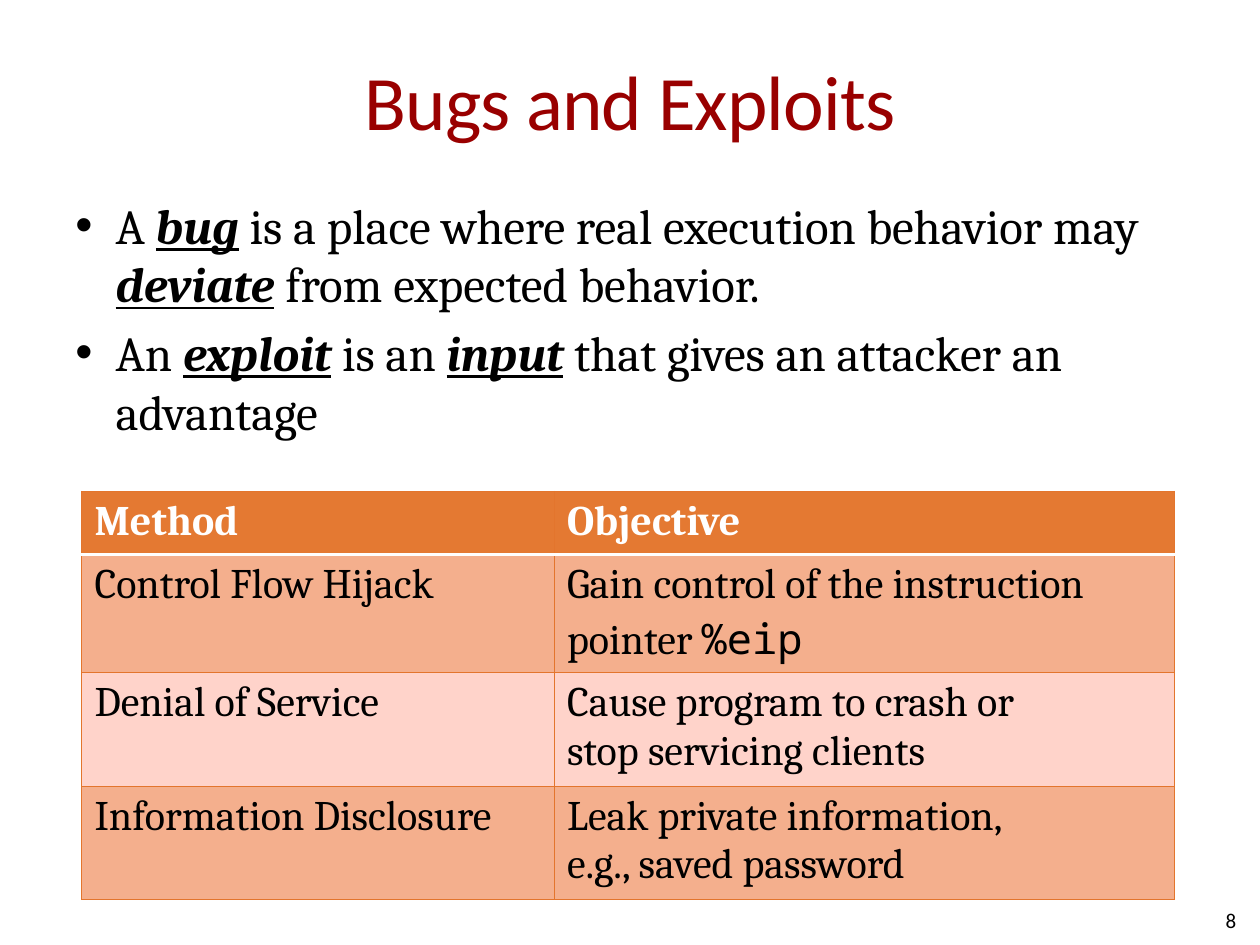
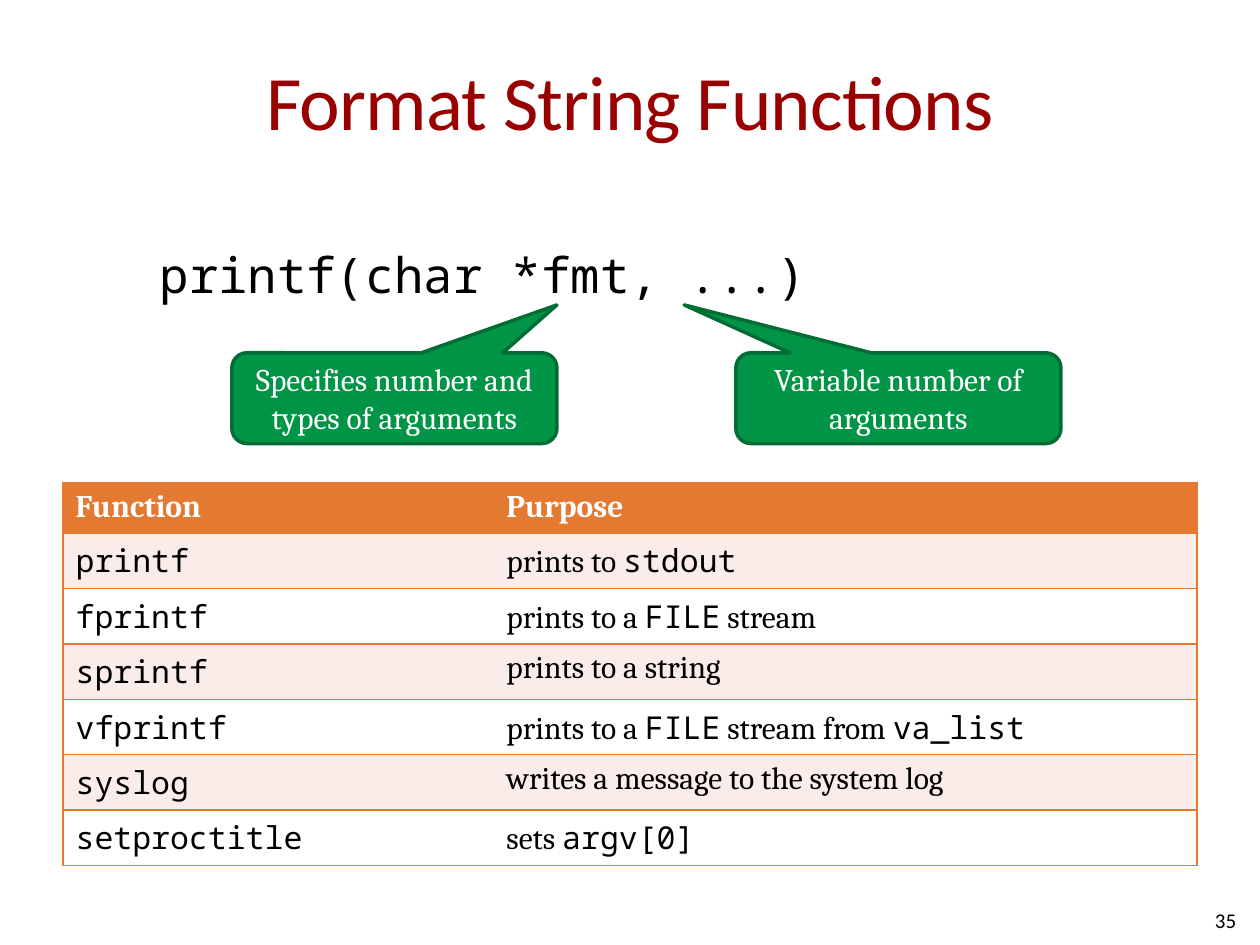
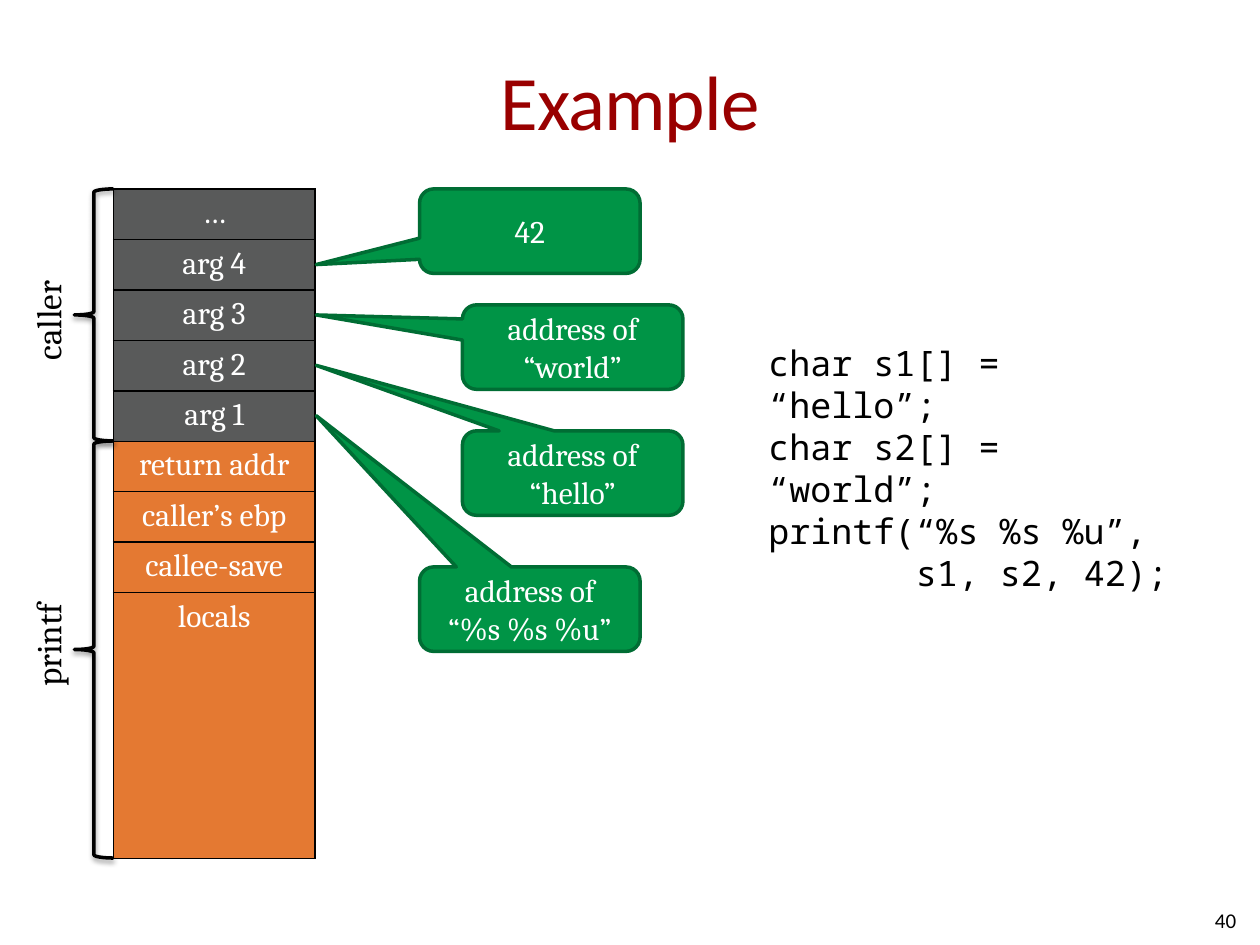
from collections import namedtuple
from dataclasses import dataclass

from lxml import etree
from pptx import Presentation
from pptx.dml.color import RGBColor
from pptx.enum.shapes import MSO_SHAPE
from pptx.enum.text import MSO_ANCHOR, MSO_AUTO_SIZE, PP_ALIGN
from pptx.oxml.ns import qn
from pptx.util import Inches, Pt

CALLOUT = MSO_SHAPE.ROUNDED_RECTANGULAR_CALLOUT
BRACE = MSO_SHAPE.LEFT_BRACE
TOP, MIDDLE = MSO_ANCHOR.TOP, MSO_ANCHOR.MIDDLE
LEFT, CENTER, RIGHT = PP_ALIGN.LEFT, PP_ALIGN.CENTER, PP_ALIGN.RIGHT
FIXED, GROW = MSO_AUTO_SIZE.NONE, MSO_AUTO_SIZE.SHAPE_TO_FIT_TEXT
TITLE_ONLY = 5
PLAIN_TABLE = "{2D5ABB26-0587-4C30-8999-92F81FD0307C}"

Box = namedtuple("Box", "left top width height")


@dataclass(frozen=True)
class Theme:
    heading: str = "Calibri"
    serif: str = "Cambria"
    mono: str = "Noto Sans Mono"
    red: str = "990000"
    black: str = "000000"
    white: str = "FFFFFF"
    orange: str = "E47932"
    orange_edge: str = "E3752D"
    peach: str = "F4AF8D"
    pink: str = "FFD3CA"
    blush: str = "FAECE8"
    gray: str = "595A5A"
    green: str = "009446"
    green_edge: str = "006D34"
    title_size: int = 44
    body_size: int = 28
    large_table_size: int = 24
    code_size: int = 20
    small_size: int = 18
    number_size: int = 12


THEME = Theme()
CODE = {"name": THEME.mono}
TERM = {"bold": True, "italic": True, "underline": True}


def inches(box):
    return [Inches(length) for length in box]


def style(size, name=THEME.serif, color=THEME.black, **extra):
    return {"size": Pt(size), "name": name, "color": color, **extra}


def format_font(font, values):
    for key, value in values.items():
        if key == "color":
            font.color.rgb = RGBColor.from_string(value)
        else:
            setattr(font, key, value)


def write_line(paragraph, text, base, emphasis=None, align=LEFT):
    paragraph.alignment = align
    for position, piece in enumerate(text.split("|")):
        values = {**base, **(emphasis or {})} if position % 2 else base
        for row, words in enumerate(piece.split("\n")):
            if row:
                paragraph.add_line_break()
            if words:
                run = paragraph.add_run()
                run.text = words
                format_font(run.font, values)


def write_lines(frame, lines, base, emphasis=None, align=LEFT, **frame_values):
    for key, value in {"word_wrap": True, **frame_values}.items():
        setattr(frame, key, value)
    for index, text in enumerate(lines):
        paragraph = frame.paragraphs[0] if index == 0 else frame.add_paragraph()
        write_line(paragraph, text, base, emphasis, align)
    return frame


def add_text(slide, box, lines, base, **options):
    return write_lines(slide.shapes.add_textbox(*inches(box)).text_frame, lines, base, **options)


def start_slide(deck, heading, number):
    slide = deck.slides.add_slide(deck.slide_layouts[TITLE_ONLY])
    title = slide.shapes.title
    title.left, title.top, title.width, title.height = inches(Box(0.5, 0.17, 9, 1.25))
    write_lines(title.text_frame, [heading], style(THEME.title_size, THEME.heading, THEME.red),
                align=CENTER, vertical_anchor=MIDDLE, auto_size=FIXED, margin_left=0, margin_right=0)
    for run in title.text_frame.paragraphs[0].runs:
        run.font._element.set("spc", "-50")
    add_text(slide, Box(7.58, 7.1, 2.33, 0.4), [str(number)],
             style(THEME.number_size, THEME.heading), align=RIGHT, vertical_anchor=MIDDLE)
    return slide


def border_cell(cell, edges):
    properties = cell._tc.get_or_add_tcPr()
    for index, side in enumerate(side for side in "LRTB" if side in edges):
        color, width = edges[side]
        line = etree.Element(qn(f"a:ln{side}"), w=str(Pt(width)))
        fill = etree.SubElement(line, qn("a:solidFill"))
        etree.SubElement(fill, qn("a:srgbClr"), val=color)
        properties.insert(index, line)


def add_table(slide, box, widths, heights, rows, format_cell):
    table = slide.shapes.add_table(len(rows), len(widths), *inches(box)).table
    table._tbl.tblPr.find(qn("a:tableStyleId")).text = PLAIN_TABLE
    table.first_row = table.horz_banding = False
    for column, width in zip(table.columns, widths):
        column.width = Inches(width)
    for row_index, (row, height, texts) in enumerate(zip(table.rows, heights, rows)):
        row.height = Inches(height)
        for column_index, text in enumerate(texts):
            cell = table.cell(row_index, column_index)
            fill, base, align, edges = format_cell(row_index, column_index)
            cell.fill.solid()
            cell.fill.fore_color.rgb = RGBColor.from_string(fill)
            write_line(cell.text_frame.paragraphs[0], text, base, CODE, align)
            border_cell(cell, edges)


def add_callout(slide, box, tip, text):
    callout = slide.shapes.add_shape(CALLOUT, *inches(box))
    callout.shadow.inherit = False
    callout.adjustments[0] = (tip[0] - box.left) / box.width - 0.5
    callout.adjustments[1] = (tip[1] - box.top) / box.height - 0.5
    callout.fill.solid()
    callout.fill.fore_color.rgb = RGBColor.from_string(THEME.green)
    callout.line.color.rgb = RGBColor.from_string(THEME.green_edge)
    callout.line.width = Pt(2)
    write_lines(callout.text_frame, [text], style(THEME.small_size, color=THEME.white),
                align=CENTER, vertical_anchor=MIDDLE)


def add_bullets(slide, box, lines):
    frame = add_text(slide, box, lines, style(THEME.body_size), emphasis=TERM)
    for paragraph in frame.paragraphs:
        paragraph.space_before = Pt(5.6)
        properties = paragraph._p.get_or_add_pPr()
        properties.set("marL", str(Inches(0.32)))
        properties.set("indent", str(Inches(-0.32)))
        etree.SubElement(properties, qn("a:buFont"), typeface="Arial")
        etree.SubElement(properties, qn("a:buChar"), char="•")


def add_exploit_table(slide, box):
    def format_cell(row, column):
        edge = (THEME.orange_edge, 0.75)
        edges = dict.fromkeys("LRTB", edge)
        if row < 2:
            edges["B" if row == 0 else "T"] = (THEME.white, 2)
        if row == 0:
            return THEME.orange, style(THEME.large_table_size, color=THEME.white, bold=True), LEFT, edges
        return (THEME.peach if row % 2 else THEME.pink), style(THEME.large_table_size), LEFT, edges

    rows = [
        ("Method", "Objective"),
        ("Control Flow Hijack", "Gain control of the instruction pointer |%eip|"),
        ("Denial of Service", "Cause program to crash or\nstop servicing clients"),
        ("Information Disclosure", "Leak private information,\ne.g., saved password"),
    ]
    add_table(slide, box, [3.75, 4.92], [0.48, 0.94, 0.87, 0.87], rows, format_cell)


def add_function_table(slide, box):
    def format_cell(row, column):
        edges = dict.fromkeys("RTB" if column else "LTB", (THEME.orange, 1))
        if row == 0:
            return THEME.orange, style(THEME.small_size, color=THEME.white, bold=True), LEFT, edges
        return (THEME.blush if row % 2 else THEME.white), style(THEME.small_size), LEFT, edges

    rows = [
        ("Function", "Purpose"),
        ("|printf|", "prints to |stdout|"),
        ("|fprintf|", "prints to a |FILE| stream"),
        ("|sprintf|", "prints to a string"),
        ("|vfprintf|", "prints to a |FILE| stream from |va_list|"),
        ("|syslog|", "writes a message to the system log"),
        ("|setproctitle|", "sets |argv[0]|"),
    ]
    add_table(slide, box, [3.42, 5.58], [0.4] + [0.44] * 6, rows, format_cell)


def add_signature(slide, box):
    add_text(slide, Box(box.left, box.top, 5.75, 0.57), ["printf(char *fmt, ...)"],
             style(THEME.body_size, THEME.mono), auto_size=GROW)
    notes = [
        (0.67, 3.25, "Specifies number and types of arguments"),
        (4.67, 4.26, "Variable number of arguments"),
    ]
    for offset, tip, text in notes:
        add_callout(slide, Box(box.left + offset, box.top + 0.91, 2.58, 0.72),
                    (box.left + tip, box.top + 0.53), text)


def add_frame_brace(slide, box, label, label_top, label_length):
    brace = slide.shapes.add_shape(BRACE, *inches(box))
    brace.fill.background()
    brace.line.color.rgb = RGBColor.from_string(THEME.black)
    brace.line.width = Pt(2)
    brace.shadow.inherit = False
    effects = brace._element.spPr.find(qn("a:effectLst"))
    shadow = etree.SubElement(effects, qn("a:outerShdw"), blurRad=str(Pt(3.1)),
                              dist=str(Pt(1.6)), dir="5400000", rotWithShape="0")
    color = etree.SubElement(shadow, qn("a:srgbClr"), val=THEME.black)
    etree.SubElement(color, qn("a:alpha"), val="38000")
    frame = add_text(slide, Box(box.left - 0.43, label_top, 0.54, label_length), [label],
                     style(THEME.code_size), word_wrap=False, auto_size=GROW)
    frame._txBody.bodyPr.set("vert", "vert270")


def add_stack(slide, box):
    slots = ["…", "arg 4", "arg 3", "arg 2", "arg 1",
             "return addr", "caller’s ebp", "callee-save", "locals"]
    caller_slots, slot_height = 5, 0.4
    caller_height = caller_slots * slot_height
    heights = [slot_height] * (len(slots) - 1)
    heights.append(box.height - sum(heights))

    def format_cell(row, column):
        fill = THEME.gray if row < caller_slots else THEME.orange
        edges = dict.fromkeys("LRTB", (THEME.black, 1))
        return fill, style(THEME.small_size, color=THEME.white), CENTER, edges

    add_table(slide, box, [box.width], heights, [(slot,) for slot in slots], format_cell)

    brace_left = box.left - 0.31
    add_frame_brace(slide, Box(brace_left, box.top, 0.31, caller_height), "caller", box.top + 0.69, 0.77)
    add_frame_brace(slide, Box(brace_left, box.top + caller_height, 0.31, box.height - caller_height),
                    "printf", box.top + 3.23, 0.82)

    right = box.left + box.width
    arguments = [
        (0.83, 0, "42"),
        (1.17, 0.92, "address of\n“world”"),
        (1.17, 1.92, "address of\n“hello”"),
        (0.83, 3, "address of\n“%s %s %u”"),
    ]
    for slot, (offset, drop, text) in enumerate(arguments, start=1):
        tip = (right + 0.01, box.top + (slot + 0.5) * slot_height)
        add_callout(slide, Box(right + offset, box.top + drop, 1.75, 0.67), tip, text)


def add_program(slide, box):
    lines = ["char s1[] = “hello”;", "char s2[] = “world”;", "printf(“%s %s %u”,", "s1, s2, 42);"]
    frame = add_text(slide, box, lines, style(THEME.code_size, THEME.mono), auto_size=GROW)
    frame.paragraphs[-1]._p.get_or_add_pPr().set("marL", str(Inches(1.17)))


def build_exploits(deck):
    slide = start_slide(deck, "Bugs and Exploits", 8)
    add_bullets(slide, Box(0.5, 1.5, 9, 2.2), [
        "A |bug| is a place where real execution behavior may |deviate| from expected behavior.",
        "An |exploit| is an |input| that gives an attacker an advantage",
    ])
    add_exploit_table(slide, Box(0.65, 3.9, 8.67, 3.16))


def build_functions(deck):
    slide = start_slide(deck, "Format String Functions", 35)
    add_function_table(slide, Box(0.5, 3.83, 9, 3.04))
    add_signature(slide, Box(1.17, 1.89, 7.25, 1.63))


def build_example(deck):
    slide = start_slide(deck, "Example", 40)
    add_program(slide, Box(6, 2.66, 3.5, 1.45))
    add_stack(slide, Box(0.9, 1.5, 1.6, 5.31))


def main():
    deck = Presentation()
    deck.slide_width, deck.slide_height = Inches(10), Inches(7.5)
    for build in (build_exploits, build_functions, build_example):
        build(deck)
    deck.save("out.pptx")


if __name__ == "__main__":
    main()
